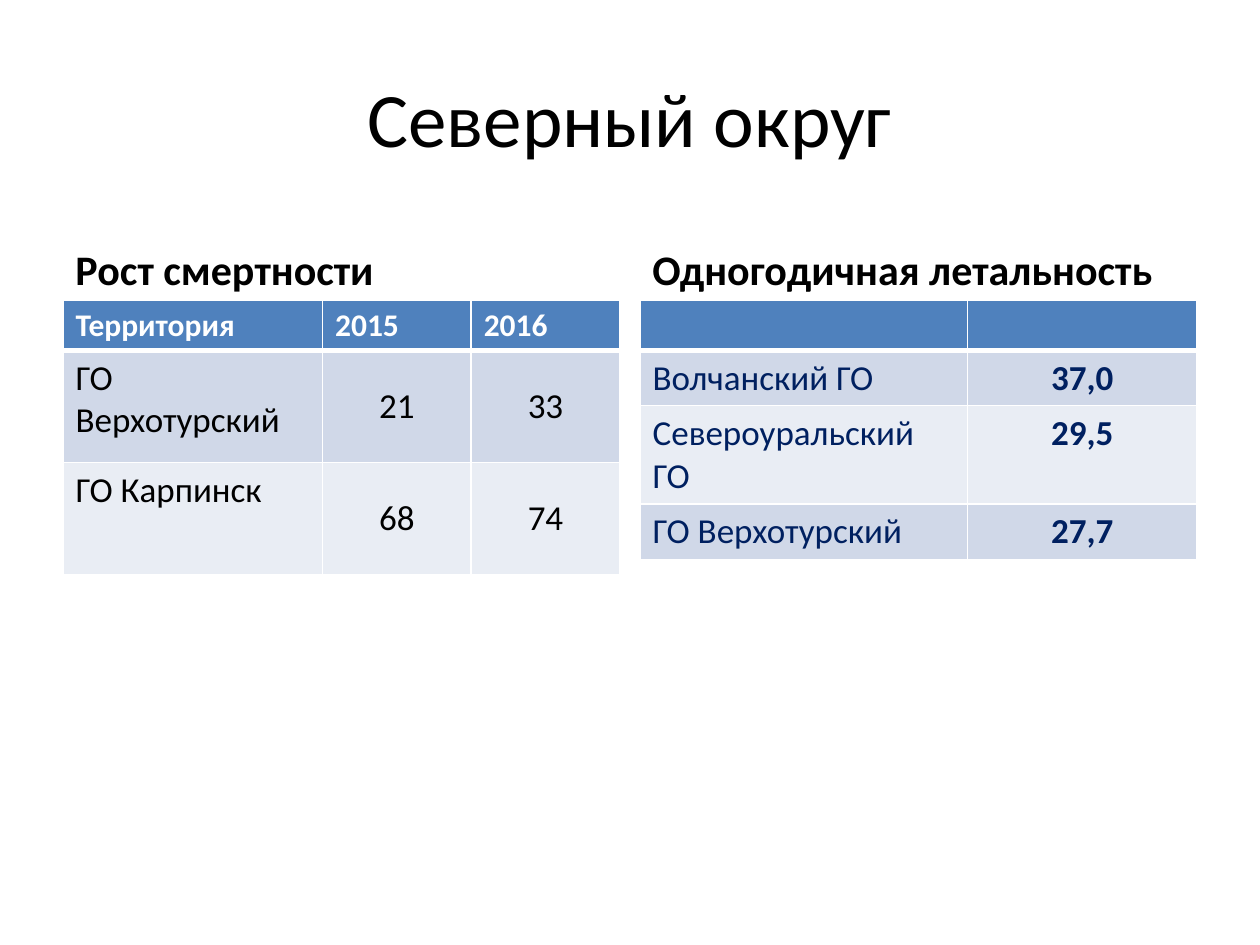
from pptx import Presentation
from pptx.dml.color import RGBColor
from pptx.enum.text import MSO_ANCHOR, PP_ALIGN
from pptx.oxml import parse_xml
from pptx.oxml.ns import nsdecls
from pptx.util import Inches, Pt


def write(frame, text, size, ink, bold=False, align=PP_ALIGN.LEFT):
    para = frame.paragraphs[0]
    para.text = text
    para.alignment = align
    look = {"name": "Calibri", "size": Pt(size), "bold": bold}
    for key, value in look.items():
        setattr(para.font, key, value)
    para.font.color.rgb = RGBColor.from_string(ink)


def edge(cell, sides):
    props = cell._tc.get_or_add_tcPr()
    # Borders must come before the cell fill
    for spot, (side, width) in enumerate(sides.items()):
        props.insert(spot, parse_xml(
            f'<a:{side} {nsdecls("a")} w="{Pt(width)}"><a:solidFill>'
            f'<a:srgbClr val="FFFFFF"/></a:solidFill></a:{side}>'))


deck = Presentation()
deck.slide_width, deck.slide_height = Inches(10), Inches(7.5)
slide = deck.slides.add_slide(deck.slide_layouts[5])

# Title
title = slide.shapes.title
place = {"left": 0.5, "top": 0.3, "width": 9, "height": 1.25}
for key, value in place.items():
    setattr(title, key, Inches(value))
title.text_frame.vertical_anchor = MSO_ANCHOR.MIDDLE
write(title.text_frame, "Северный округ", 44, "000000", align=PP_ALIGN.CENTER)

# Two halves, each with a heading above a table
halves = [
    {"left": 0.5, "head": "Рост смертности", "ink": "000000", "bold": False,
     "anchor": MSO_ANCHOR.MIDDLE,
     "cols": [2.06, 1.18, 1.18], "rows": [0.4, 0.89, 0.89],
     "data": [["Территория", "2015", "2016"],
              ["ГО Верхотурский", "21", "33"],
              ["ГО Карпинск", "68", "74"]]},
    {"left": 5.08, "head": "Одногодичная летальность", "ink": "002060",
     "bold": True, "anchor": MSO_ANCHOR.TOP,
     "cols": [2.6, 1.82], "rows": [0.4, 0.44, 0.78, 0.44],
     "data": [["", ""],
              ["Волчанский ГО", "37,0"],
              ["Североуральский ГО", "29,5"],
              ["ГО Верхотурский", "27,7"]]},
]
bands = ["E9EDF4", "D0D8E8"]

for half in halves:
    left, wide = Inches(half["left"]), Inches(4.42)

    # Heading
    box = slide.shapes.add_textbox(left, Inches(1.68), wide, Inches(0.7))
    frame = box.text_frame
    frame.word_wrap = True
    frame.vertical_anchor = MSO_ANCHOR.BOTTOM
    write(frame, half["head"], 24, "000000", True)

    # Table grid
    data, rows, cols = half["data"], half["rows"], half["cols"]
    table = slide.shapes.add_table(len(rows), len(cols), left, Inches(2.38),
                                   wide, Inches(sum(rows))).table
    for col, width in zip(table.columns, cols):
        col.width = Inches(width)
    for row, height in zip(table.rows, rows):
        row.height = Inches(height)

    # Table cells
    for r, line in enumerate(data):
        for c, text in enumerate(line):
            cell = table.cell(r, c)
            cell.fill.solid()
            tone = bands[r % 2] if r else "4F81BD"
            cell.fill.fore_color.rgb = RGBColor.from_string(tone)
            edge(cell, {"lnL": 1, "lnR": 1, "lnT": 3 if r == 1 else 1,
                        "lnB": 1 if r else 3})
            if r == 0:
                write(cell.text_frame, text, 18, "FFFFFF", True)
            elif c == 0:
                write(cell.text_frame, text, 20, half["ink"])
            else:
                cell.vertical_anchor = half["anchor"]
                write(cell.text_frame, text, 20, half["ink"], half["bold"],
                      PP_ALIGN.CENTER)

deck.save("out.pptx")
